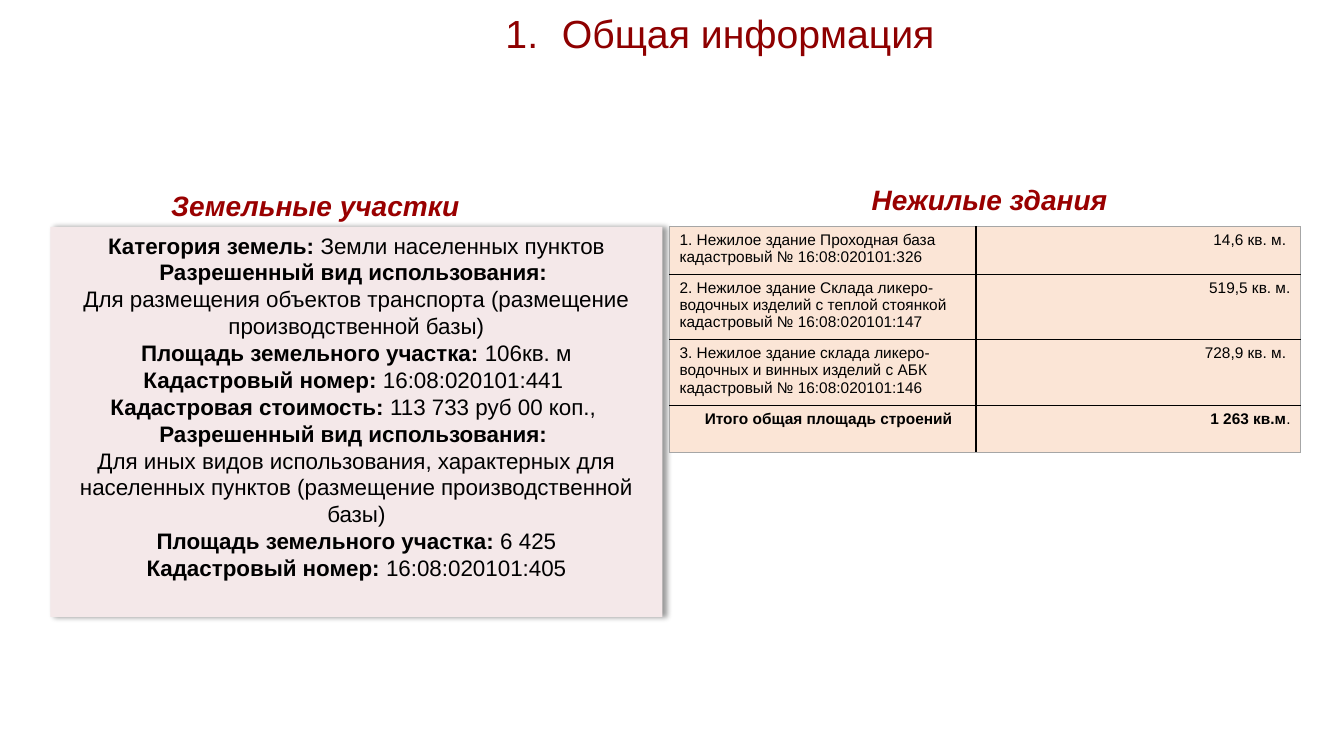
from dataclasses import dataclass

from lxml import etree
from pptx import Presentation
from pptx.dml.color import RGBColor
from pptx.enum.shapes import MSO_SHAPE
from pptx.enum.text import MSO_ANCHOR, PP_ALIGN
from pptx.oxml.ns import qn
from pptx.util import Inches, Pt

FONT = "Arial"
TITLE_RED = RGBColor(0x8E, 0x00, 0x00)
HEADING_RED = RGBColor(0x99, 0x00, 0x00)
BLACK = RGBColor(0x00, 0x00, 0x00)
OUTLINE_GREY = RGBColor(0xA6, 0xA6, 0xA6)
PANEL_PINK = RGBColor(0xF4, 0xE8, 0xE9)
CELL_PEACH = RGBColor(0xFB, 0xE5, 0xD6)
LEFT, CENTER, RIGHT = PP_ALIGN.LEFT, PP_ALIGN.CENTER, PP_ALIGN.RIGHT
RECTANGLE, TOP = MSO_SHAPE.RECTANGLE, MSO_ANCHOR.TOP


@dataclass(frozen=True)
class Span:
    text: str
    bold: bool = False


@dataclass(frozen=True)
class Heading:
    text: str
    left: float
    top: float
    width: float
    alignment: PP_ALIGN


@dataclass(frozen=True)
class BuildingRow:
    height: float
    name: Span
    area: tuple[Span, ...]
    indent: float = 0


HEADINGS = (
    Heading("Земельные участки", 1.6, 1.82, 3.44, LEFT),
    Heading("Нежилые здания", 6.65, 1.76, 6.33, CENTER),
)

LAND_PARAGRAPHS = (
    (Span("Категория земель: ", True), Span("Земли населенных пунктов "),
     Span("Разрешенный вид использования: ", True)),
    (Span("Для размещения объектов транспорта (размещение производственной базы)"),),
    (Span("Площадь земельного участка:", True), Span(" 106кв. м")),
    (Span("Кадастровый номер: ", True), Span("16:08:020101:441 ")),
    (Span("Кадастровая стоимость: ", True), Span("113 733 руб 00 коп., ")),
    (Span("Разрешенный вид использования: ", True),),
    (Span("Для иных видов использования, характерных для населенных пунктов "
          "(размещение производственной базы)"),),
    (Span("Площадь земельного участка:", True), Span(" 6 425")),
    (Span("Кадастровый номер: ", True), Span("16:08:020101:405")),
)

BUILDING_ROWS = (
    BuildingRow(0.47, Span("1. Нежилое здание Проходная база кадастровый № 16:08:020101:326"),
                (Span("14,6 кв. м. "),)),
    BuildingRow(0.65, Span("2. Нежилое здание Склада ликеро-водочных изделий с теплой "
                           "стоянкой кадастровый № 16:08:020101:147"),
                (Span("519,5 кв. м."),)),
    BuildingRow(0.65, Span("3. Нежилое здание склада ликеро-водочных и винных изделий "
                           "с АБК кадастровый № 16:08:020101:146"),
                (Span("728,9 кв. м. "),)),
    BuildingRow(0.47, Span("Итого общая площадь строений", True),
                (Span("1 263 кв.м", True), Span(".")), 0.25),
)
COLUMN_WIDTHS = (3.04, 3.22)


def add_run(paragraph, span: Span, size: float, color: RGBColor, italic: bool = False) -> None:
    run = paragraph.add_run()
    run.text = span.text
    font = run.font
    font.name, font.size, font.bold, font.italic = FONT, Pt(size), span.bold, italic
    font.color.rgb = color


def place(shape, left: float, top: float, width: float, height: float) -> None:
    shape.left, shape.top = Inches(left), Inches(top)
    shape.width, shape.height = Inches(width), Inches(height)


def fill_title(title) -> None:
    place(title, 2.14, 0.1, 10, 0.51)
    paragraph = title.text_frame.paragraphs[0]
    properties = paragraph._p.get_or_add_pPr()
    properties.set("marL", str(Inches(0.56)))
    properties.set("indent", str(Inches(-0.56)))
    etree.SubElement(properties, qn("a:buFont"), typeface="+mj-lt")
    etree.SubElement(properties, qn("a:buAutoNum"), type="arabicPeriod")
    paragraph.alignment = CENTER
    paragraph.line_spacing = 0.9
    add_run(paragraph, Span("Общая информация"), 28, TITLE_RED)


def add_heading(slide, heading: Heading) -> None:
    box = slide.shapes.add_textbox(Inches(heading.left), Inches(heading.top),
                                   Inches(heading.width), Inches(0.44))
    box.text_frame.word_wrap = True
    paragraph = box.text_frame.paragraphs[0]
    paragraph.alignment = heading.alignment
    add_run(paragraph, Span(heading.text, True), 20, HEADING_RED, italic=True)


def add_right_shadow(shape) -> None:
    shape.shadow.inherit = False
    effects = shape._element.spPr.find(qn("a:effectLst"))
    shadow = etree.SubElement(effects, qn("a:outerShdw"), blurRad=str(Pt(4)),
                              dist=str(Pt(3)), dir="0", algn="l", rotWithShape="0")
    color = etree.SubElement(shadow, qn("a:srgbClr"), val=str(BLACK))
    etree.SubElement(color, qn("a:alpha"), val="40000")


def add_land_panel(slide) -> None:
    panel = slide.shapes.add_shape(RECTANGLE, Inches(0.5), Inches(2.25),
                                   Inches(6.07), Inches(3.87))
    panel.fill.solid()
    panel.fill.fore_color.rgb = PANEL_PINK
    panel.line.fill.background()
    add_right_shadow(panel)
    frame = panel.text_frame
    frame.word_wrap = True
    frame.vertical_anchor = TOP
    for index, spans in enumerate(LAND_PARAGRAPHS):
        paragraph = frame.add_paragraph() if index else frame.paragraphs[0]
        paragraph.alignment = CENTER
        for span in spans:
            add_run(paragraph, span, 16, BLACK)


def set_borders(cell, outer_sides: set[str]) -> None:
    """Draw grey hairlines on the outer sides and black lines elsewhere."""
    properties = cell._tc.get_or_add_tcPr()
    for position, side in enumerate("LRTB"):
        outer = side in outer_sides
        line = etree.Element(qn(f"a:ln{side}"), w=str(Pt(0.5 if outer else 1)))
        fill = etree.SubElement(line, qn("a:solidFill"))
        etree.SubElement(fill, qn("a:srgbClr"), val=str(OUTLINE_GREY if outer else BLACK))
        properties.insert(position, line)


def add_buildings_table(slide) -> None:
    total_height = sum(row.height for row in BUILDING_ROWS)
    table = slide.shapes.add_table(len(BUILDING_ROWS), len(COLUMN_WIDTHS), Inches(6.64),
                                   Inches(2.25), Inches(sum(COLUMN_WIDTHS)),
                                   Inches(total_height)).table
    table.first_row = table.horz_banding = False
    for column, width in zip(table.columns, COLUMN_WIDTHS):
        column.width = Inches(width)
    last_row = len(BUILDING_ROWS) - 1
    for row_index, row in enumerate(BUILDING_ROWS):
        table.rows[row_index].height = Inches(row.height)
        contents = (((row.name,), LEFT, "L"), (row.area, RIGHT, "R"))
        for column_index, (spans, alignment, outer_side) in enumerate(contents):
            cell = table.cell(row_index, column_index)
            cell.fill.solid()
            cell.fill.fore_color.rgb = CELL_PEACH
            outer_sides = {outer_side}
            if row_index == 0:
                outer_sides.add("T")
            if row_index == last_row:
                outer_sides.add("B")
            set_borders(cell, outer_sides)
            paragraph = cell.text_frame.paragraphs[0]
            paragraph.alignment = alignment
            if row.indent and alignment == LEFT:
                paragraph._p.get_or_add_pPr().set("marL", str(Inches(row.indent)))
            for span in spans:
                add_run(paragraph, span, 11, BLACK)


def main() -> None:
    presentation = Presentation()
    presentation.slide_width, presentation.slide_height = Inches(13.33), Inches(7.5)
    title_only = presentation.slide_layouts.get_by_name("Title Only")
    slide = presentation.slides.add_slide(title_only)
    fill_title(slide.shapes.title)
    add_land_panel(slide)
    for heading in HEADINGS:
        add_heading(slide, heading)
    add_buildings_table(slide)
    presentation.save("out.pptx")


if __name__ == "__main__":
    main()
